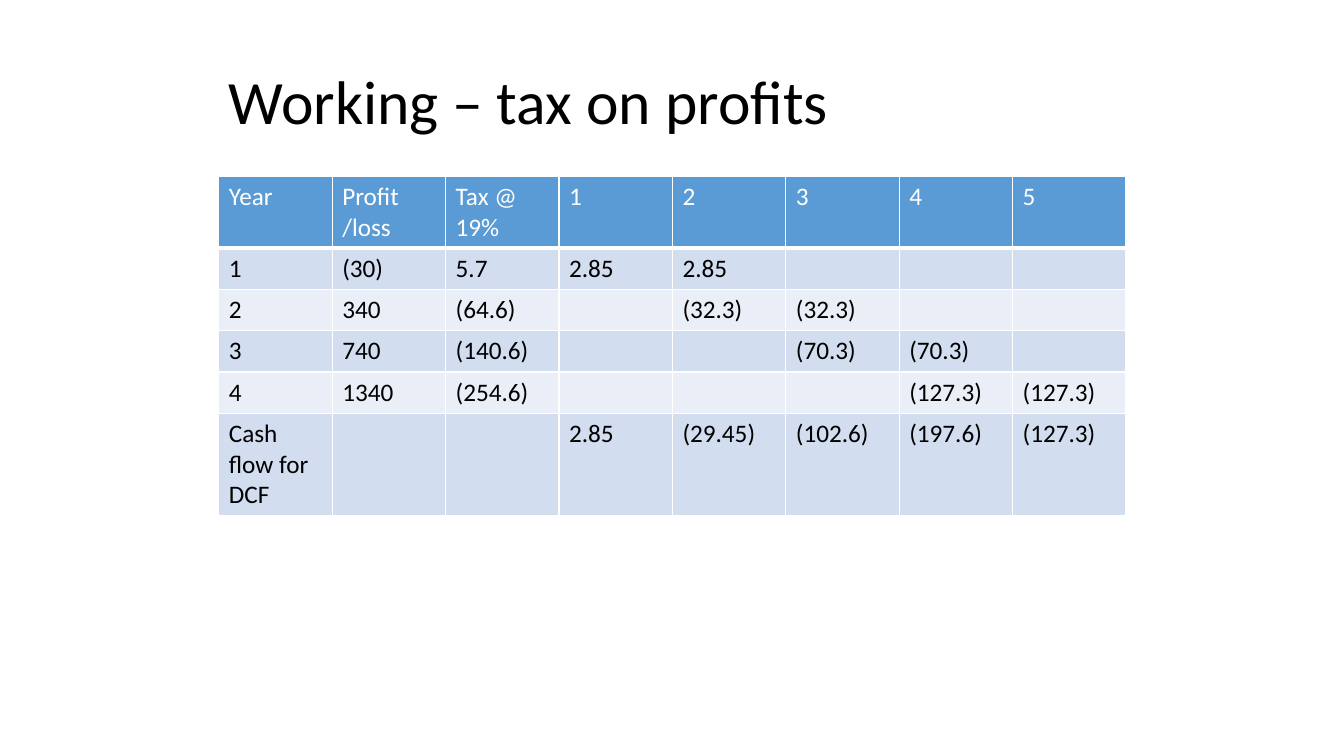
from dataclasses import dataclass
from lxml.etree import SubElement as Sub
from pptx import Presentation as Deck
from pptx.dml.color import RGBColor as Rgb
from pptx.enum.text import MSO_ANCHOR as Anchor, MSO_AUTO_SIZE as Fit, PP_ALIGN as Align
from pptx.oxml.ns import qn
from pptx.util import Inches, Pt

HUES = {"ink": "000000", "white": "FFFFFF", "head": "5B9BD5", "dark": "D2DEEF", "light": "EAEFF7"}


@dataclass(frozen=True)
class Row:
    """One table row: its height in inches, fill, text colour, texts and bottom line."""

    high: float
    fill: str
    ink: str
    texts: tuple[str, ...]
    rule: float = 1


ROWS = (
    Row(0.7, "head", "white", ("Year", "Profit\n/loss", "Tax @ 19%", "1", "2", "3", "4", "5"), 3),
    Row(0.41, "dark", "ink", ("1", "(30)", "5.7", "2.85", "2.85", "", "", "")),
    Row(0.41, "light", "ink", ("2", "340", "(64.6)", "", "(32.3)", "(32.3)", "", "")),
    Row(0.41, "dark", "ink", ("3", "740", "(140.6)", "", "", "(70.3)", "(70.3)", "")),
    Row(0.41, "light", "ink", ("4", "1340", "(254.6)", "", "", "", "(127.3)", "(127.3)")),
    Row(1, "dark", "ink", ("Cash flow for DCF", "", "", "2.85", "(29.45)", "(102.6)", "(197.6)", "(127.3)")),
)


def write(frame, text: str, *, size: float = 18, hue: str = "ink", space: float = 1) -> None:
    """Fill a text frame with left-aligned paragraphs."""
    frame.text = text
    for para in frame.paragraphs:
        para.alignment = Align.LEFT
        para.line_spacing = space
        for run in para.runs:
            font = run.font
            font.name, font.size, font.bold = "Calibri", Pt(size), False
            font.color.rgb = Rgb.from_string(HUES[hue])


def edge(cell, rule: float) -> None:
    """Draw the white lines round a cell."""
    props = cell._tc.get_or_add_tcPr()
    for spot, side in enumerate("LRTB"):
        wide = Pt(rule if side == "B" else 1)
        line = Sub(props, qn(f"a:ln{side}"), w=str(wide))
        Sub(Sub(line, qn("a:solidFill")), qn("a:srgbClr"), val=HUES["white"])
        props.insert(spot, line)


def grid(slide, rows: tuple[Row, ...]) -> None:
    """Add the tax table."""
    high = sum(row.high for row in rows)
    cols = len(rows[0].texts)
    table = slide.shapes.add_table(
        len(rows), cols, Inches(2.17), Inches(1.75), Inches(9), Inches(high)
    ).table
    for y, row in enumerate(rows):
        table.rows[y].height = Inches(row.high)
        for x, text in enumerate(row.texts):
            cell = table.cell(y, x)
            write(cell.text_frame, text, hue=row.ink)
            cell.fill.solid()
            cell.fill.fore_color.rgb = Rgb.from_string(HUES[row.fill])
            edge(cell, row.rule)


def main() -> None:
    """Build and save the slide."""
    deck = Deck()
    deck.slide_width, deck.slide_height = Inches(13.33), Inches(7.5)
    slide = deck.slides.add_slide(deck.slide_layouts[5])
    title = slide.shapes.title
    title.left, title.top = Inches(2.17), Inches(0.52)
    title.width, title.height = Inches(9), Inches(1.03)
    frame = title.text_frame
    frame.auto_size, frame.vertical_anchor = Fit.NONE, Anchor.MIDDLE
    write(frame, "Working – tax on profits", size=44, space=0.9)
    grid(slide, ROWS)
    deck.save("out.pptx")


if __name__ == "__main__":
    main()
